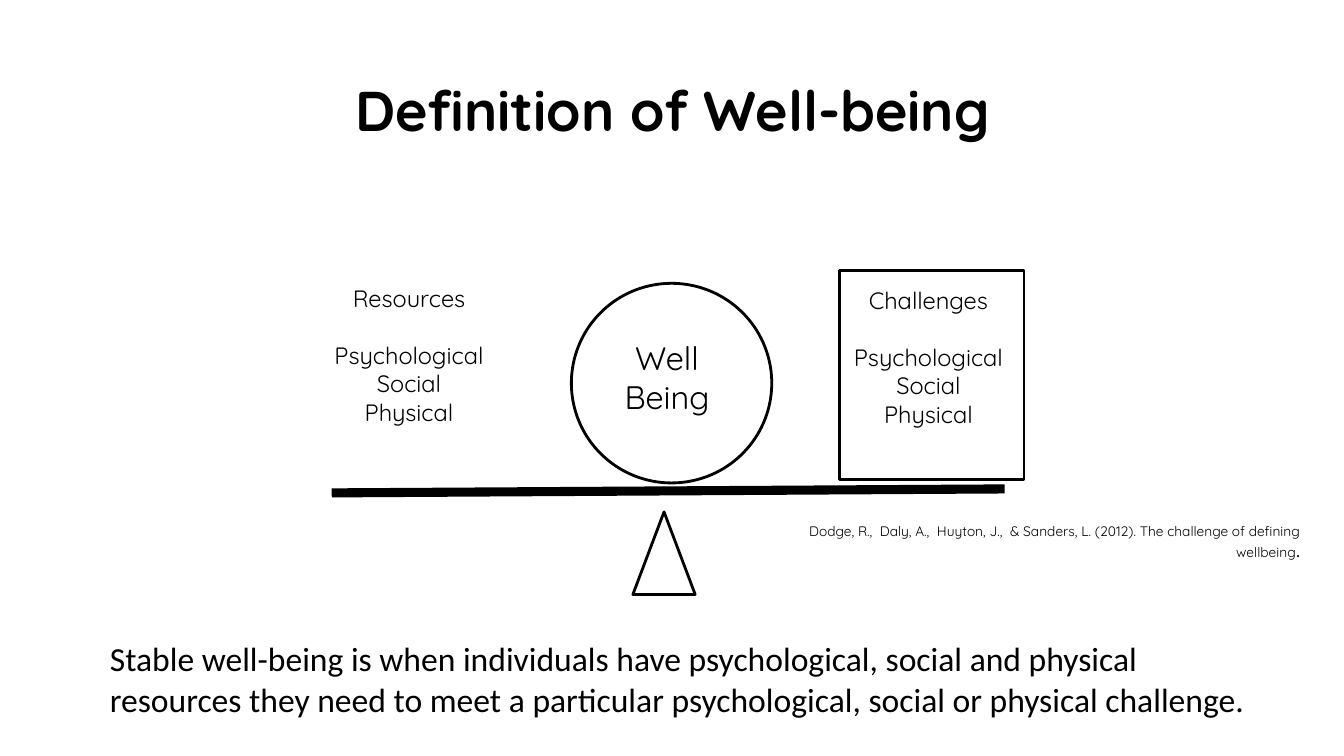
from lxml.etree import SubElement
from pptx import Presentation
from pptx.dml.color import RGBColor
from pptx.enum.shapes import MSO_CONNECTOR, MSO_SHAPE
from pptx.enum.text import MSO_ANCHOR, PP_ALIGN
from pptx.oxml.ns import qn
from pptx.util import Cm, Pt

BLACK = "000000"


def color(value):
    return RGBColor.from_string(value)


def add_text(text, box, size, font="Quicksand", bold=False, align=PP_ALIGN.CENTER,
             anchor=MSO_ANCHOR.TOP, spacing=None, inset=(0.2, 0.1)):
    tf = s.shapes.add_textbox(*[Cm(v) for v in box]).text_frame
    tf.word_wrap = True
    tf.vertical_anchor = anchor
    tf.margin_left = tf.margin_right = Cm(inset[0])
    tf.margin_top = tf.margin_bottom = Cm(inset[1])
    for i, line in enumerate(text.split("\n")):
        p = tf.paragraphs[0] if i == 0 else tf.add_paragraph()
        p.alignment = align
        p.line_spacing = spacing
        r = p.add_run()
        r.text = line
        r.font.name = font
        r.font.size = Pt(size)
        r.font.bold = bold
        r.font.color.rgb = color(BLACK)
    return tf


prs = Presentation()
prs.slide_width = Cm(33.87)
prs.slide_height = Cm(19.05)
s = prs.slides.add_slide(prs.slide_layouts[6])

add_text("Definition of Well-being", (2.34, 1.02, 29.21, 3.68), 40, bold=True,
         anchor=MSO_ANCHOR.MIDDLE, spacing=0.9, inset=(0.25, 0.13))

for kind, box in [
    (MSO_SHAPE.OVAL, (14.4, 7.14, 5.05, 5.03)),
    (MSO_SHAPE.RECTANGLE, (21.16, 6.81, 4.65, 5.28)),
    (MSO_SHAPE.ISOSCELES_TRIANGLE, (15.95, 12.9, 1.57, 2.08)),
]:
    sp = s.shapes.add_shape(kind, *[Cm(v) for v in box])
    sp.shadow.inherit = False
    sp.fill.background()
    sp.line.color.rgb = color(BLACK)
    sp.line.width = Pt(2)

beam = s.shapes.add_connector(MSO_CONNECTOR.STRAIGHT, Cm(8.36), Cm(12.42), Cm(25.32), Cm(12.32))
beam.line.color.rgb = color(BLACK)
beam.line.width = Pt(6.5)
SubElement(beam._element.spPr, qn("a:effectLst"))

add_text("Well Being", (15.11, 8.41, 3.4, 2.21), 23.2)

for heading, left, top in [("Resources", 7.92, 7.06), ("Challenges", 21.01, 7.11)]:
    tf = add_text(f"{heading}\nPsychological\nSocial\nPhysical", (left, top, 4.78, 3.81), 16.9)
    tf.paragraphs[0].space_after = Pt(20.3)

tf = add_text("Dodge, R.,  Daly, A.,  Huyton, J.,  & Sanders, L. (2012). "
              "The challenge of defining wellbeing",
              (19.46, 13.08, 13.51, 1.19), 9.8, align=PP_ALIGN.RIGHT)
r = tf.paragraphs[0].add_run()
r.text = "."
r.font.name = "Calibri"
r.font.size = Pt(12.7)
r.font.color.rgb = color(BLACK)

add_text("Stable well-being is when individuals have psychological, social and physical "
         "resources they need to meet a particular psychological, social or physical challenge.",
         (2.57, 15.98, 29.26, 2.29), 24, font="Calibri", align=PP_ALIGN.LEFT)

prs.save("out.pptx")
